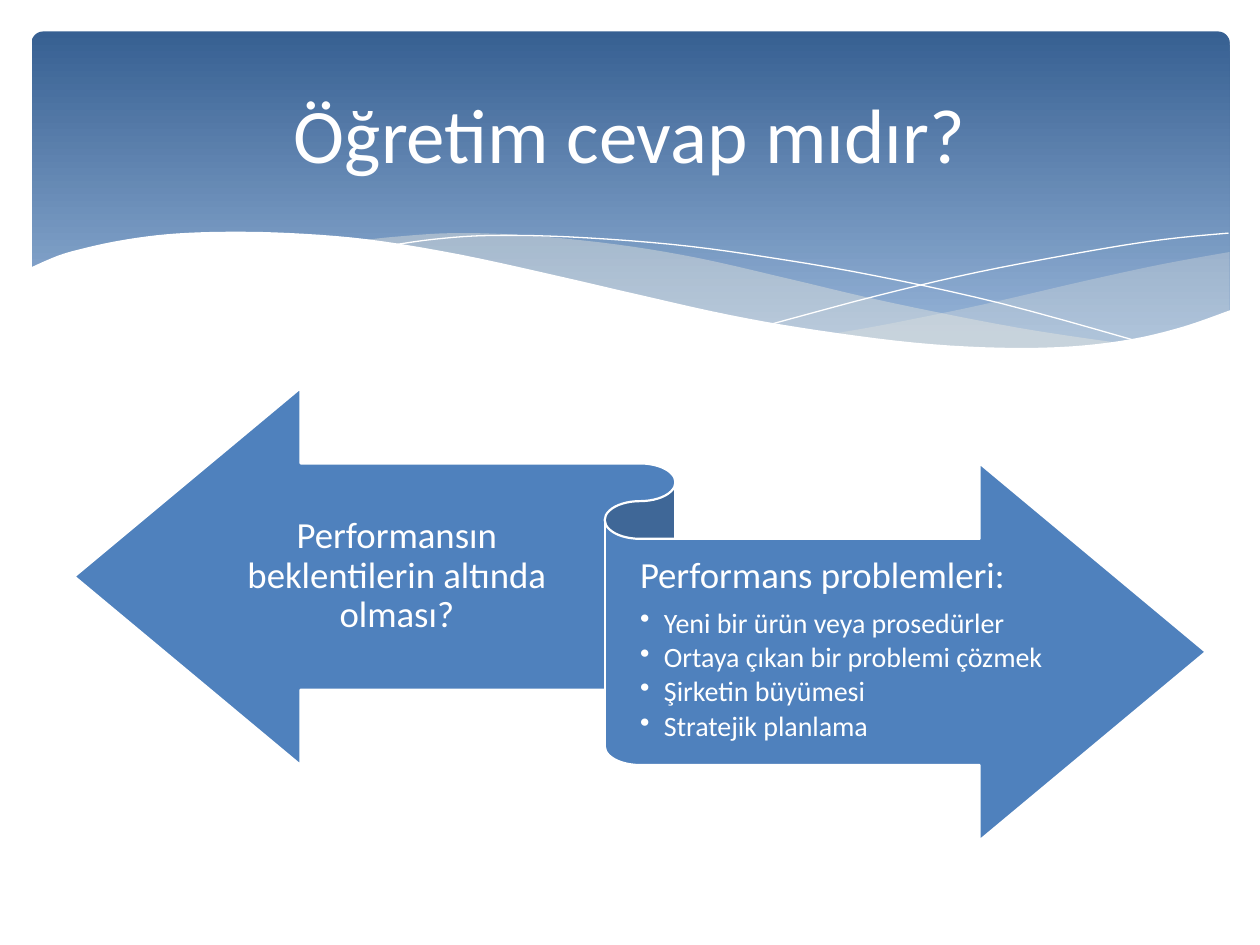
from pptx import Presentation
from pptx.dml.color import RGBColor
from pptx.enum.shapes import MSO_SHAPE
from pptx.enum.text import MSO_ANCHOR, PP_ALIGN
from pptx.oxml.ns import qn
from pptx.util import Inches, Pt
from lxml.etree import SubElement

WHITE = "FFFFFF"
BLUE = "4F81BD"
CREAM = "EEECE1"
FONT = "Calibri"

# Wave knots in inches from the top left corner of the banner
RIGHT_WAVE_TOP = [(9.51, 1.75), (8.96, 1.85), (8.36, 1.98), (7.54, 2.17), (6.81, 2.32), (6.36, 2.4)]
RIGHT_WAVE_BOTTOM = [(6.36, 2.4), (6.94, 2.47), (7.44, 2.52), (7.89, 2.53), (8.38, 2.5),
                     (8.88, 2.42), (9.24, 2.32), (9.51, 2.22)]
LONG_WAVE_TOP = [(8.68, 2.48), (7.82, 2.35), (6.81, 2.15), (6.04, 1.97), (5.3, 1.8),
                 (4.64, 1.69), (3.95, 1.62), (3.36, 1.6), (2.88, 1.63), (2.61, 1.66)]
LONG_WAVE_BOTTOM = [(2.61, 1.66), (3.17, 1.74), (3.79, 1.86), (4.24, 1.97), (5.05, 2.15),
                    (5.76, 2.3), (6.4, 2.41), (6.97, 2.49), (7.48, 2.52), (7.93, 2.53),
                    (8.32, 2.52), (8.68, 2.48)]
FALLING_LINE = [(2.84, 1.7), (3.19, 1.65), (3.62, 1.62), (4.25, 1.63), (5.08, 1.69),
                (5.83, 1.79), (6.7, 1.94), (7.7, 2.16), (8.82, 2.47)]
RISING_LINE = [(5.88, 2.32), (6.7, 2.1), (7.51, 1.91), (8.41, 1.74), (8.99, 1.65), (9.5, 1.6)]
PAGE_EDGE = [(9.52, 2.21), (9.15, 2.34), (8.74, 2.44), (8.25, 2.5), (7.68, 2.51), (7.01, 2.47),
             (6.23, 2.37), (5.54, 2.25), (4.78, 2.08), (4.22, 1.95), (3.4, 1.77), (2.67, 1.65),
             (2.05, 1.6), (1.52, 1.59), (1.07, 1.61), (0.7, 1.66), (0.42, 1.72), (0.21, 1.78),
             (-0.02, 1.88)]
PAGE_CORNERS = [(-0.02, 3.04), (9.52, 3.04)]

QUESTION = "Performansın beklentilerin altında olması?"
PROBLEMS_HEADING = "Performans problemleri:"
PROBLEMS = ["Yeni bir ürün veya prosedürler", "Ortaya çıkan bir problemi çözmek",
            "Şirketin büyümesi", "Stratejik planlama"]


def rgb(value):
    return RGBColor.from_string(value)


def smooth(knots, steps=5):
    """Return points of a Catmull-Rom curve through the knots."""
    padded = [knots[0], *knots, knots[-1]]
    points = [knots[0]]
    for a, b, c, d in zip(padded, padded[1:], padded[2:], padded[3:]):
        for step in range(1, steps + 1):
            t = step / steps
            points.append(tuple(
                (2 * q + (r - p) * t + (2 * p - 5 * q + 4 * r - s) * t ** 2
                 + (3 * q - p - 3 * r + s) * t ** 3) / 2
                for p, q, r, s in zip(a, b, c, d)))
    return points


def add_outline(slide, left, top, points, closed):
    places = [(left + Inches(x), top + Inches(y)) for x, y in points]
    builder = slide.shapes.build_freeform(*places[0], scale=1.0)
    builder.add_line_segments(places[1:], close=closed)
    outline = builder.convert_to_shape()
    outline.shadow.inherit = False
    return outline


def add_wave(slide, left, top, points, color, opacity=100):
    wave = add_outline(slide, left, top, points, closed=True)
    wave.fill.solid()
    wave.fill.fore_color.rgb = rgb(color)
    wave.line.fill.background()
    if opacity < 100:
        tint = wave._element.spPr.find(qn("a:solidFill"))[0]
        SubElement(tint, qn("a:alpha"), val=str(opacity * 1000))


def add_wave_line(slide, left, top, knots):
    wave_line = add_outline(slide, left, top, smooth(knots), closed=False)
    wave_line.fill.background()
    wave_line.line.color.rgb = rgb(WHITE)
    wave_line.line.width = Pt(0)


def add_banner(slide, left, top, width, height):
    panel = slide.shapes.add_shape(MSO_SHAPE.ROUNDED_RECTANGLE, left, top, width, height)
    panel.adjustments[0] = 0.034
    panel.shadow.inherit = False
    panel.line.fill.background()
    panel.fill.gradient()
    panel.fill.gradient_angle = 270
    for stop, (position, color) in zip(panel.fill.gradient_stops, [(0, "376092"), (0.9, "95B3D7")]):
        stop.position = position
        stop.color.rgb = rgb(color)

    add_wave(slide, left, top, smooth(RIGHT_WAVE_TOP) + smooth(RIGHT_WAVE_BOTTOM), CREAM, 29)
    add_wave(slide, left, top, smooth(LONG_WAVE_TOP) + smooth(LONG_WAVE_BOTTOM), CREAM, 40)
    for knots in (FALLING_LINE, RISING_LINE):
        add_wave_line(slide, left, top, knots)
    add_wave(slide, left, top, smooth(PAGE_EDGE) + PAGE_CORNERS, WHITE)


def format_paragraph(paragraph, text, size, space_after=None):
    paragraph.text = text
    paragraph.font.name = FONT
    paragraph.font.size = Pt(size)
    paragraph.font.color.rgb = rgb(WHITE)
    if space_after is not None:
        paragraph.line_spacing = 0.9
        paragraph.space_after = Pt(space_after)


def add_arrow_text(slide, left, top, width, height, heading):
    frame = slide.shapes.add_textbox(left, top, width, height).text_frame
    frame.word_wrap = True
    frame.vertical_anchor = MSO_ANCHOR.MIDDLE
    frame.margin_left = frame.margin_right = 0
    frame.margin_top, frame.margin_bottom = Inches(0.08), Inches(0.09)
    format_paragraph(frame.paragraphs[0], heading, 21, 7.35)
    return frame


def add_bullet(frame, text):
    paragraph = frame.add_paragraph()
    format_paragraph(paragraph, text, 16, 2.4)
    paragraph.level = 1
    properties = paragraph._p.get_or_add_pPr()
    properties.set("marL", str(Inches(0.19)))
    properties.set("indent", str(Inches(-0.19)))
    SubElement(properties, qn("a:buChar"), char="•")


def add_ribbon(slide, left, top, width, height):
    ribbon = slide.shapes.add_shape(MSO_SHAPE.LEFT_RIGHT_RIBBON, left, top, width, height)
    ribbon.shadow.inherit = False
    ribbon.fill.solid()
    ribbon.fill.fore_color.rgb = rgb(BLUE)
    ribbon.line.color.rgb = rgb(WHITE)
    ribbon.line.width = Pt(1.25)

    text_height = Inches(1.76)
    question = add_arrow_text(slide, left + Inches(1.08), top + Inches(0.62),
                              Inches(2.96), text_height, QUESTION)
    question.paragraphs[0].alignment = PP_ALIGN.CENTER
    problems = add_arrow_text(slide, left + Inches(4.49), top + Inches(1.2),
                              Inches(3.5), text_height, PROBLEMS_HEADING)
    for problem in PROBLEMS:
        add_bullet(problems, problem)


def place_title(slide, left, top, width, height):
    title = slide.shapes.title
    title.left, title.top, title.width, title.height = left, top, width, height
    title.text_frame.vertical_anchor = MSO_ANCHOR.MIDDLE
    heading = title.text_frame.paragraphs[0]
    format_paragraph(heading, "Öğretim cevap mıdır?", 44)
    heading.alignment = PP_ALIGN.CENTER
    slide.shapes._spTree.append(title._element)  # bring in front of the banner


def main():
    presentation = Presentation()
    presentation.slide_width, presentation.slide_height = Inches(10), Inches(7.5)
    slide = presentation.slides.add_slide(presentation.slide_layouts[5])
    add_banner(slide, Inches(0.25), Inches(0.25), Inches(9.51), Inches(2.7))
    add_ribbon(slide, Inches(0.59), Inches(3.08), Inches(8.98), Inches(3.59))
    place_title(slide, Inches(0.5), Inches(0.37), Inches(9), Inches(1.37))
    presentation.save("out.pptx")


if __name__ == "__main__":
    main()
